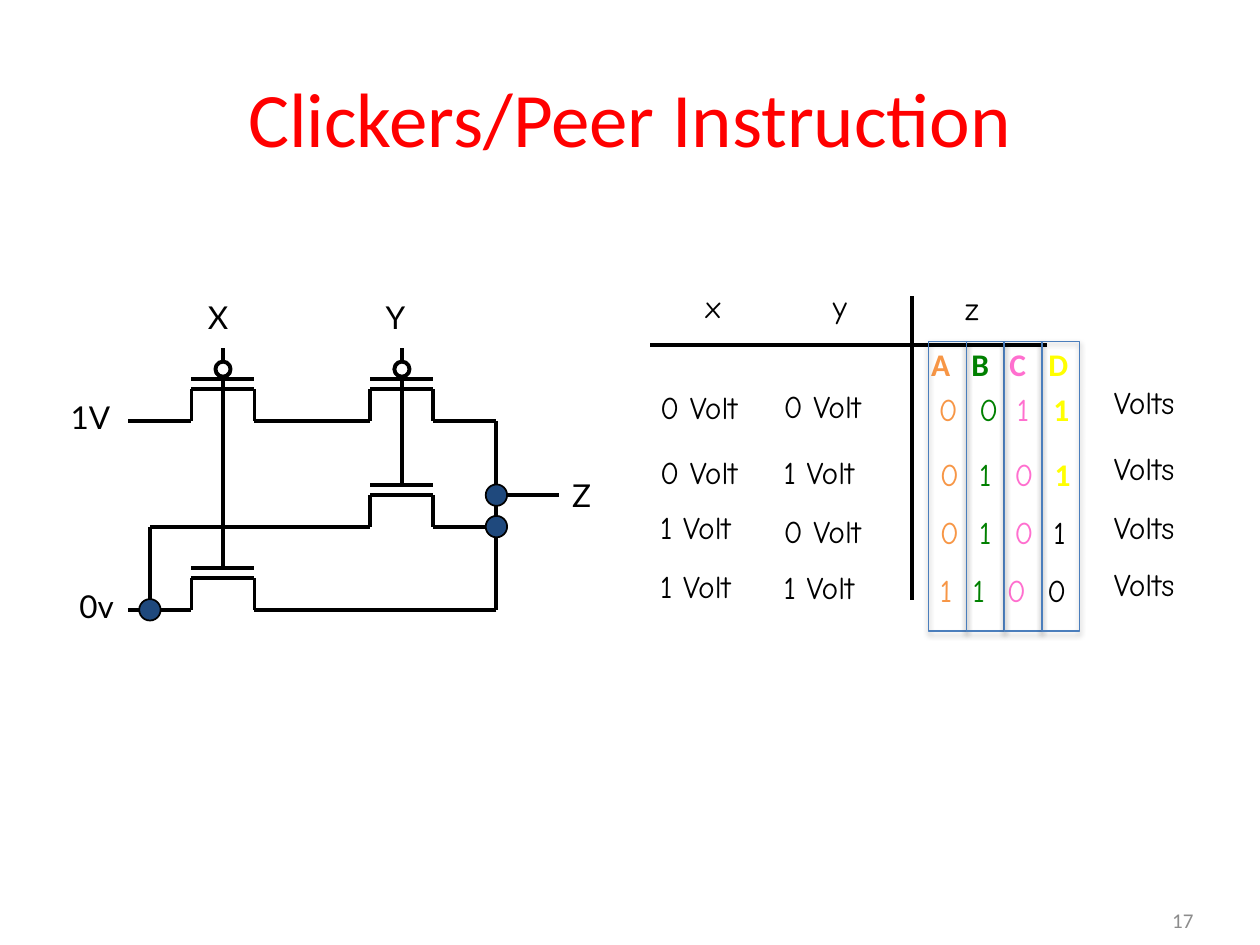
import dataclasses
import typing

import pptx
import pptx.dml.color
import pptx.enum.shapes
import pptx.enum.text
import pptx.oxml
import pptx.oxml.ns
import pptx.util

Inches = pptx.util.Inches
Pt = pptx.util.Pt
ALIGN = pptx.enum.text.PP_ALIGN
SHAPE = pptx.enum.shapes.MSO_SHAPE
NS = pptx.oxml.ns.nsdecls("a")
BLACK, YELLOW = "000000", "FFFF00"
HUES = ("F79646", "008000", "FF6FCF")
HAND, SANS, LABEL = "Comic Neue", "Calibri", "Lato"


@dataclasses.dataclass
class Run:
    text: str
    hue: str = BLACK
    font: str = HAND
    bold: bool = False
    edge: bool = False


@dataclasses.dataclass
class Gate:
    x: float
    y: float
    bubble: bool = False


@dataclasses.dataclass
class Row:
    y: float
    x: float
    bits: str
    stops: tuple
    bright: bool = False


deck = pptx.Presentation()
deck.slide_width, deck.slide_height = Inches(10), Inches(7.5)
slide = deck.slides.add_slide(deck.slide_layouts[6])


def tint(hue: str) -> pptx.dml.color.RGBColor:
    return pptx.dml.color.RGBColor.from_string(hue)


def xml(body: str) -> typing.Any:
    return pptx.oxml.parse_xml(body)


def write(text: str | list[Run], x: float, y: float, w: float = 0.4,
          h: float = 0.45, size: float = 18, font: str = HAND,
          hue: str = BLACK, align: ALIGN = ALIGN.LEFT, tight: bool = True,
          stops: tuple = ()) -> None:
    """Place text; tight boxes have thin margins and 21 pt lines."""
    box = slide.shapes.add_textbox(Inches(x), Inches(y), Inches(w), Inches(h))
    frame = box.text_frame
    frame.word_wrap = not tight
    para = frame.paragraphs[0]
    para.alignment = align
    if tight:
        frame.margin_left = frame.margin_right = Inches(0.02)
        frame.margin_top = frame.margin_bottom = Inches(0.03)
        para.line_spacing = Pt(21)
    else:
        frame.vertical_anchor = pptx.enum.text.MSO_ANCHOR.MIDDLE
    if stops:
        tabs = "".join(f'<a:tab pos="{Inches(s)}" algn="l"/>' for s in stops)
        para._p.get_or_add_pPr().append(
            xml(f"<a:tabLst {NS}>{tabs}</a:tabLst>"))
    runs = [Run(text, hue, font)] if isinstance(text, str) else text
    for part in runs:
        run = para.add_run()
        run.text = part.text
        run.font.size, run.font.name = Pt(size), part.font
        run.font.bold = part.bold
        run.font.color.rgb = tint(part.hue)
        if part.edge:
            run.font._element.insert(0, xml(
                f'<a:ln {NS} w="{Pt(0.75)}"><a:solidFill>'
                f'<a:srgbClr val="{BLACK}"/></a:solidFill></a:ln>'))


def line(x1: float, y1: float, x2: float, y2: float,
         width: float = 2.25) -> None:
    wire = slide.shapes.add_connector(
        pptx.enum.shapes.MSO_CONNECTOR.STRAIGHT,
        Inches(x1), Inches(y1), Inches(x2), Inches(y2))
    wire.line.width = Pt(width)
    wire.line.color.rgb = tint(BLACK)
    wire._element.spPr.append(xml(f"<a:effectLst {NS}/>"))


def shape(kind: SHAPE, x: float, y: float, w: float, h: float,
          fill: str | None, edge: str, width: float) -> typing.Any:
    item = slide.shapes.add_shape(
        kind, Inches(x), Inches(y), Inches(w), Inches(h))
    item.shadow.inherit = False
    if fill:
        item.fill.solid()
        item.fill.fore_color.rgb = tint(fill)
    else:
        item.fill.background()
    item.line.color.rgb = tint(edge)
    item.line.width = Pt(width)
    return item


def dot(x: float, y: float, size: float, fill: str, width: float) -> None:
    shape(SHAPE.OVAL, x - size / 2, y - size / 2, size, size,
          fill, BLACK, width)


def switch(gate: Gate) -> None:
    """Draw a transistor whose channel starts at the gate's x and y."""
    x, y = gate.x, gate.y
    path = [(-0.5, 0), (0, 0), (0, -0.25), (0.5, -0.25), (0.5, 0), (1, 0)]
    for (ax, ay), (bx, by) in zip(path, path[1:]):
        line(x + ax, y + ay, x + bx, y + by)
    line(x, y - 0.33, x + 0.5, y - 0.33)
    line(x + 0.25, y - 0.33, x + 0.25, y - 0.58)
    if gate.bubble:
        dot(x + 0.25, y - 0.41, 0.12, "FFFFFF", 2.25)


# Title and slide number
write("Clickers/Peer Instruction", 0.5, 0.3, w=9, h=1.25, size=44, font=SANS,
      hue="FF0000", align=ALIGN.CENTER, tight=False)
write("17", 7.24, 7.1, w=2.33, h=0.4, size=12, font=SANS, hue="8C8C8C",
      align=ALIGN.RIGHT, tight=False)

# Circuit: wires, transistors, joints and labels
for ends in [(3.94, 3.34, 3.94, 4.84), (3.94, 3.93, 4.44, 3.93),
             (1.77, 4.35, 1.77, 2.76), (3.19, 3.68, 3.19, 2.76),
             (2.44, 4.18, 1.19, 4.18), (3.94, 4.84, 2.44, 4.84),
             (1.19, 4.18, 1.19, 4.84)]:
    line(*ends)
for gate in [Gate(1.52, 4.84), Gate(1.52, 3.34, True),
             Gate(2.94, 4.18), Gate(2.94, 3.34, True)]:
    switch(gate)
for x, y in [(1.19, 4.84), (3.94, 4.18), (3.94, 3.93)]:
    dot(x, y, 0.17, "1F497D", 1)
for name, x, y in [("1V", 0.54, 3.14), ("0v", 0.61, 4.64), ("X", 1.63, 2.34),
                   ("Y", 3.04, 2.34), ("Z", 4.52, 3.76)]:
    write(name, x, y, font=LABEL)

# Truth table: rules, heads and volts
line(5.16, 2.74, 8.31, 2.74, width=2)
line(7.24, 2.35, 7.24, 4.76, width=2)
for name, x, y in [("x", 5.58, 2.26), ("y", 6.59, 2.26), ("z", 7.64, 2.27)]:
    write(name, x, y)
for x, words, tops in [
        (5.22, ["0 Volt", "0 Volt", "1 Volt", "1 Volt"],
         [3.06, 3.57, 4.01, 4.48]),
        (6.2, ["0 Volt", "1 Volt", "0 Volt", "1 Volt"],
         [3.05, 3.57, 4.04, 4.49]),
        (8.82, ["Volts"] * 4, [3.02, 3.54, 4.01, 4.46])]:
    for word, top in zip(words, tops):
        write(word, x, top, w=0.97)

# Answer choices, in boxes wide enough for the last tab stop
for row in [Row(3.07, 7.43, "0011", (0.32, 0.62, 0.91), True),
            Row(3.59, 7.44, "0101", (0.31, 0.59, 0.91), True),
            Row(4.05, 7.44, "0101", (0.31, 0.59, 0.9)),
            Row(4.51, 7.44, "1100", (0.26, 0.53, 0.85))]:
    runs = [Run(bit + "\t", hue) for bit, hue in zip(row.bits, HUES)]
    last = row.bits[-1]
    runs.append(Run(last, YELLOW, SANS, True, True) if row.bright
                else Run(last))
    write(runs, row.x, row.y, w=1.15, stops=row.stops)
heads = [Run(name + "\t", hue, SANS, True) for name, hue in zip("ABC", HUES)]
heads.append(Run("D", YELLOW, SANS, True, True))
write(heads, 7.37, 2.72, w=1.15, h=0.59, stops=(0.32, 0.62, 0.93))

# Frames round the choices
for i in range(4):
    frame = shape(SHAPE.RECTANGLE, 7.37 + 0.3 * i, 2.71, 0.3, 2.3,
                  None, "4B7EBC", 0.75)
    glow = frame._element.spPr.find(pptx.oxml.ns.qn("a:effectLst"))
    glow.append(xml(
        f'<a:outerShdw {NS} blurRad="{Pt(3.1)}" dist="{Pt(1.8)}" '
        f'dir="5400000" rotWithShape="0"><a:srgbClr val="{BLACK}">'
        '<a:alpha val="35000"/></a:srgbClr></a:outerShdw>'))

deck.save("out.pptx")
